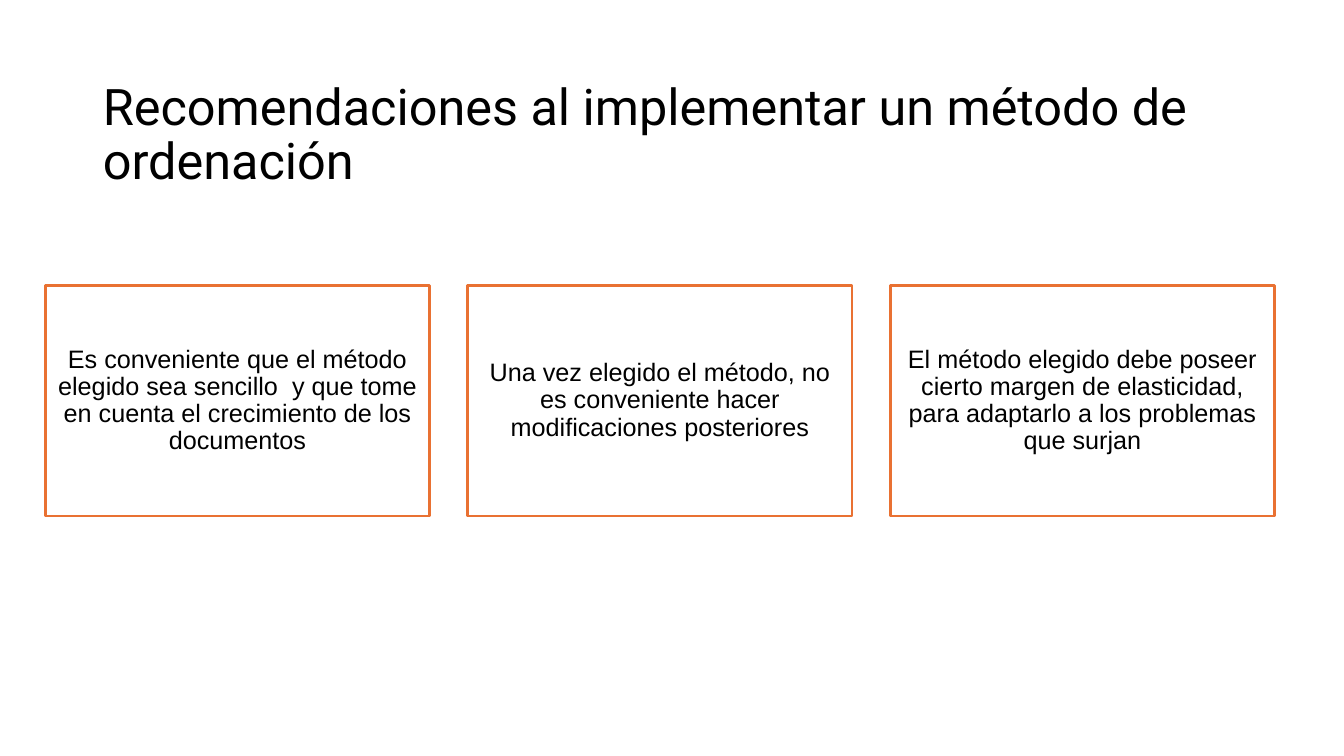
from pptx import Presentation
from pptx.dml.color import RGBColor
from pptx.enum.shapes import MSO_SHAPE
from pptx.enum.text import MSO_ANCHOR, MSO_AUTO_SIZE, PP_ALIGN
from pptx.util import Inches, Pt

HEADING = "Recomendaciones al implementar un método de ordenación"
RECOMMENDATIONS = [
    "Es conveniente que el método elegido sea sencillo  y que tome en cuenta "
    "el crecimiento de los documentos",
    "Una vez elegido el método, no es conveniente hacer modificaciones posteriores",
    "El método elegido debe poseer cierto margen de elasticidad, "
    "para adaptarlo a los problemas que surjan",
]


def colour(hex_code):
    return RGBColor.from_string(hex_code)


class RecommendationSlide:
    INK, PAPER, ACCENT = "000000", "FFFFFF", "E97132"
    MARGIN, TOP = 0.45, 2.83
    CARD_WIDTH, CARD_HEIGHT, GAP = 3.81, 2.29, 0.38
    INSET = 0.07

    def __init__(self, deck):
        self.slide = deck.slides.add_slide(deck.slide_layouts[5])

    def set_wording(self, frame, wording, font_name, size, align):
        frame.text = wording
        frame.word_wrap = True
        frame.auto_size = MSO_AUTO_SIZE.NONE
        frame.vertical_anchor = MSO_ANCHOR.MIDDLE
        paragraph = frame.paragraphs[0]
        paragraph.alignment = align
        paragraph.line_spacing = 0.9
        font = paragraph.runs[0].font
        font.name, font.size = font_name, Pt(size)
        font.color.rgb = colour(self.INK)

    def title(self, wording):
        heading = self.slide.shapes.title
        heading.left, heading.top = Inches(0.92), Inches(0.85)
        heading.width, heading.height = Inches(11.5), Inches(1)
        self.set_wording(heading.text_frame, wording, "Roboto", 36, PP_ALIGN.LEFT)

    def card(self, column, wording):
        left = self.MARGIN + column * (self.CARD_WIDTH + self.GAP)
        card = self.slide.shapes.add_shape(
            MSO_SHAPE.RECTANGLE, Inches(left), Inches(self.TOP),
            Inches(self.CARD_WIDTH), Inches(self.CARD_HEIGHT))
        card.shadow.inherit = False
        card.fill.solid()
        card.fill.fore_color.rgb = colour(self.PAPER)
        card.line.color.rgb = colour(self.ACCENT)
        card.line.width = Pt(2)
        frame = card.text_frame
        frame.margin_left = frame.margin_right = Inches(self.INSET)
        frame.margin_top = frame.margin_bottom = Inches(self.INSET)
        self.set_wording(frame, wording, "Arial", 18, PP_ALIGN.CENTER)


def main():
    deck = Presentation()
    deck.slide_width, deck.slide_height = Inches(13.33), Inches(7.5)
    page = RecommendationSlide(deck)
    page.title(HEADING)
    for column, recommendation in enumerate(RECOMMENDATIONS):
        page.card(column, recommendation)
    deck.save("out.pptx")


if __name__ == "__main__":
    main()
